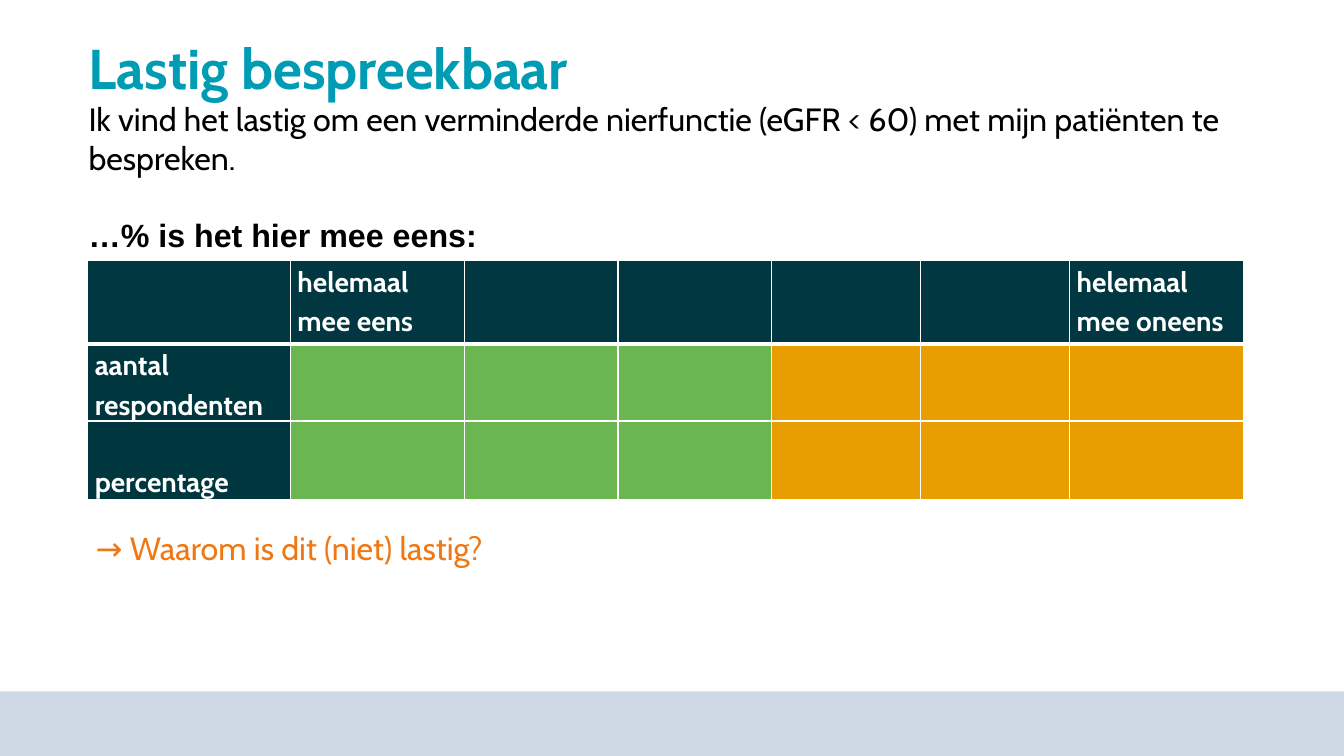
from lxml import etree
from pptx import Presentation
from pptx import util as u
from pptx.dml.color import RGBColor
from pptx.enum import shapes, text
from pptx.oxml.ns import qn

COLORS = {
    "title": "009CB4", "black": "000000", "question": "F07814", "white": "FFFFFF",
    "footer": "CED9E5", "header": "003741", "label": "00373E",
    "agree": "6AB650", "disagree": "E89E00",
}
COLUMN_WIDTHS = [2.01, 1.73, 1.52, 1.52, 1.48, 1.48, 1.73]
ROW_HEIGHTS = [0.83, 0.71, 0.78]
CELL_TEXTS = {
    (0, 1): ["helemaal mee eens"],
    (0, 6): ["helemaal mee oneens"],
    (1, 0): ["aantal", "respondenten"],
    (2, 0): ["percentage"],
}
CELL_FORMAT = {"size": u.Pt(20), "name": "Cabin", "bold": True}


def color(name):
    """Return the named colour."""
    return RGBColor.from_string(COLORS[name])


def set_attributes(target, values):
    """Set each attribute in values on the target."""
    for name, value in values.items():
        setattr(target, name, value)


def write_paragraph(paragraph, wording, color_name, font_format, spacing=None):
    """Write formatted wording into a paragraph."""
    run = paragraph.add_run()
    run.text = wording
    set_attributes(paragraph, spacing or {})
    set_attributes(run.font, font_format)
    run.font.color.rgb = color(color_name)


def add_text(slide, box, lines, color_name, anchor=text.MSO_ANCHOR.TOP):
    """Add a text box with (wording, font format, spacing) lines."""
    frame = slide.shapes.add_textbox(*map(u.Inches, box)).text_frame
    set_attributes(frame, {"word_wrap": True, "vertical_anchor": anchor})
    for index, (wording, font_format, spacing) in enumerate(lines):
        paragraph = frame.add_paragraph() if index else frame.paragraphs[0]
        write_paragraph(paragraph, wording, color_name, font_format, spacing)


def add_footer(slide):
    """Add the footer band."""
    band = slide.shapes.add_shape(
        shapes.MSO_SHAPE.RECTANGLE, 0, u.Inches(6.86), u.Inches(13.33), u.Inches(0.64))
    band.shadow.inherit = False
    band.fill.solid()
    band.fill.fore_color.rgb = color("footer")
    band.line.fill.background()


def set_borders(cell, widths):
    """Draw white cell borders, given point widths by side."""
    properties = cell._tc.get_or_add_tcPr()
    for side, width in widths.items():
        line = etree.SubElement(properties, qn(f"a:ln{side}"), w=str(u.Pt(width)))
        fill = etree.SubElement(line, qn("a:solidFill"))
        etree.SubElement(fill, qn("a:srgbClr"), val=COLORS["white"])


def cell_color(row, column):
    """Return the fill name for a table position."""
    if row == 0:
        return "header"
    if column == 0:
        return "label"
    return "agree" if column <= 3 else "disagree"


def format_cell(cell, row, column):
    """Style and fill in one table cell."""
    set_borders(cell, {"L": 1, "R": 1, "T": 3 if row == 1 else 1, "B": 3 if row == 0 else 1})
    cell.fill.solid()
    cell.fill.fore_color.rgb = color(cell_color(row, column))
    set_attributes(cell, {
        "margin_left": u.Inches(0.07), "margin_right": u.Inches(0.07),
        "margin_top": 0, "margin_bottom": 0,
        "vertical_anchor": text.MSO_ANCHOR.BOTTOM if row == 2 else text.MSO_ANCHOR.TOP,
    })
    frame = cell.text_frame
    for index, wording in enumerate(CELL_TEXTS.get((row, column), [])):
        paragraph = frame.add_paragraph() if index else frame.paragraphs[0]
        write_paragraph(paragraph, wording, "white", CELL_FORMAT, {"line_spacing": 1.15})


def add_response_table(slide):
    """Add the table of responses."""
    box = (0.87, 2.58, sum(COLUMN_WIDTHS), sum(ROW_HEIGHTS))
    table = slide.shapes.add_table(
        len(ROW_HEIGHTS), len(COLUMN_WIDTHS), *map(u.Inches, box)).table
    for column, width in zip(table.columns, COLUMN_WIDTHS):
        column.width = u.Inches(width)
    for row, height in zip(table.rows, ROW_HEIGHTS):
        row.height = u.Inches(height)
    for row in range(len(ROW_HEIGHTS)):
        for column in range(len(COLUMN_WIDTHS)):
            format_cell(table.cell(row, column), row, column)


def main():
    """Build and save the slide."""
    presentation = Presentation()
    set_attributes(presentation, {
        "slide_width": u.Inches(13.33), "slide_height": u.Inches(7.5)})
    slide = presentation.slides.add_slide(presentation.slide_layouts[6])
    body = {"size": u.Pt(23), "name": "Cabin"}
    add_footer(slide)
    add_text(slide, (0.78, 0.36, 10.68, 0.71), [
        ("Lastig bespreekbaar", {"size": u.Pt(40), "name": "Cabin", "bold": True},
         {"line_spacing": 0.9}),
    ], "title")
    add_response_table(slide)
    add_text(slide, (0.78, 0.93, 11.61, 1.65), [
        ("Ik vind het lastig om een verminderde nierfunctie (eGFR < 60) "
         "met mijn patiënten te bespreken.", body, {}),
        ("…% is het hier mee eens:", {**body, "name": "Arial", "bold": True},
         {"space_before": u.Pt(28)}),
    ], "black", text.MSO_ANCHOR.MIDDLE)
    add_text(slide, (0.85, 5.19, 10.53, 0.79), [
        ("→ Waarom is dit (niet) lastig?", body, {}),
    ], "question")
    presentation.save("out.pptx")


if __name__ == "__main__":
    main()
